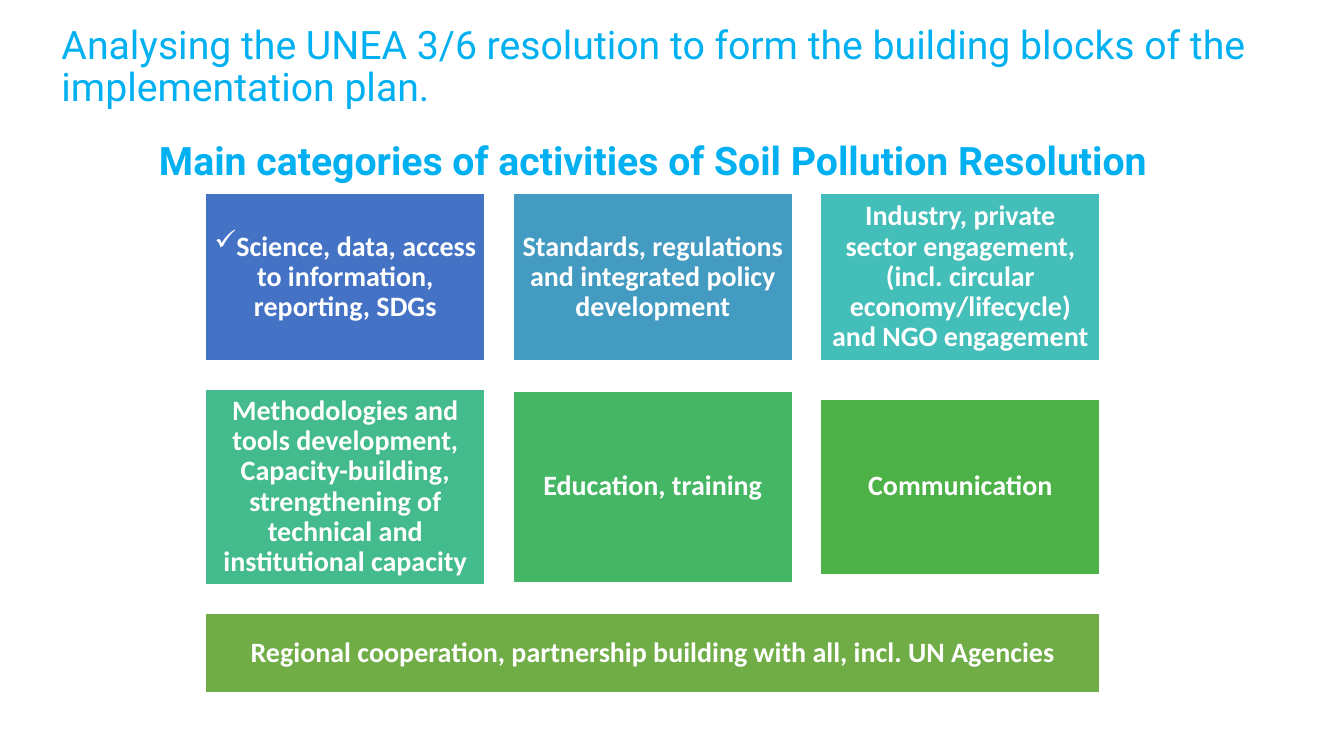
from lxml.etree import SubElement
from pptx import Presentation
from pptx.dml.color import RGBColor
from pptx.enum.shapes import MSO_SHAPE
from pptx.enum.text import MSO_ANCHOR, MSO_AUTO_SIZE, PP_ALIGN
from pptx.oxml.ns import qn
from pptx.util import Pt

PX = 9144  # 100 px to the inch
LEFT, WIDE, GAP = 204, 277, 28
ROWS = [
    (275, [
        ("Science, data, access to information, reporting, SDGs", "4472C4", 166),
        ("Standards, regulations and integrated policy development", "449BC1", 166),
        ("Industry, private sector engagement, (incl. circular "
         "economy/lifecycle) and NGO engagement", "43BEB9", 166),
    ]),
    (483, [
        ("Methodologies and tools development, Capacity-building, "
         "strengthening of technical and institutional capacity", "43BB8D", 194),
        ("Education, training", "45B664", 190),
        ("Communication", "4CB146", 174),
    ]),
]
LAST = "Regional cooperation, partnership building with all, incl. UN Agencies"


def px(*nums):
    return [round(n * PX) for n in nums]


def color(code):
    return RGBColor.from_string(code)


def write(frame, text, size, font, code, bold, align):
    frame.word_wrap = True
    frame.auto_size = MSO_AUTO_SIZE.NONE
    para = frame.paragraphs[0]
    para.alignment = align
    para.line_spacing = 0.9
    run = para.add_run()
    run.text = text
    run.font.size = Pt(size)
    run.font.name = font
    run.font.bold = bold
    run.font.color.rgb = color(code)
    return para


def add_title(slide, text):
    title = slide.shapes.title
    title.left, title.top, title.width, title.height = px(51, 26, 1282, 83)
    title.text_frame.vertical_anchor = MSO_ANCHOR.MIDDLE
    write(title.text_frame, text, 28, "Roboto", "00B0F0", False, PP_ALIGN.LEFT)


def add_head(slide, text):
    box = slide.shapes.add_textbox(*px(51, 136, 1193, 50))
    para = write(box.text_frame, text, 28, "Roboto", "00B0F0", True,
                 PP_ALIGN.CENTER)
    para.space_before = Pt(10)


def add_block(slide, text, fill, left, mid, width, height):
    """Add a filled block centred on the height mid."""
    block = slide.shapes.add_shape(
        MSO_SHAPE.RECTANGLE, *px(left, mid - height / 2, width, height))
    block.shadow.inherit = False
    block.fill.solid()
    block.fill.fore_color.rgb = color(fill)
    block.line.color.rgb = color("FFFFFF")
    block.line.width = Pt(1)
    frame = block.text_frame
    frame.vertical_anchor = MSO_ANCHOR.MIDDLE
    frame.margin_left = frame.margin_right = 8 * PX
    frame.margin_top = frame.margin_bottom = 8 * PX
    return write(frame, text, 20, "Calibri", "FFFFFF", True, PP_ALIGN.CENTER)


def add_tick(para):
    props = para._p.get_or_add_pPr()
    props.set("marL", "0")
    props.set("indent", "0")
    SubElement(props, qn("a:buChar")).set("char", "✓")


def main():
    deck = Presentation()
    deck.slide_width, deck.slide_height = px(1333, 750)
    slide = deck.slides.add_slide(deck.slide_layouts[5])
    add_title(slide, "Analysing the UNEA 3/6 resolution to form the building "
                     "blocks of the implementation plan.")
    add_head(slide, "Main categories of activities of Soil Pollution Resolution")
    paras = []
    for mid, blocks in ROWS:
        for col, (text, fill, height) in enumerate(blocks):
            left = LEFT + col * (WIDE + GAP)
            paras.append(add_block(slide, text, fill, left, mid, WIDE, height))
    add_tick(paras[0])
    add_block(slide, LAST, "70AD47", LEFT, 648, 3 * WIDE + 2 * GAP, 79)
    deck.save("out.pptx")


if __name__ == "__main__":
    main()
